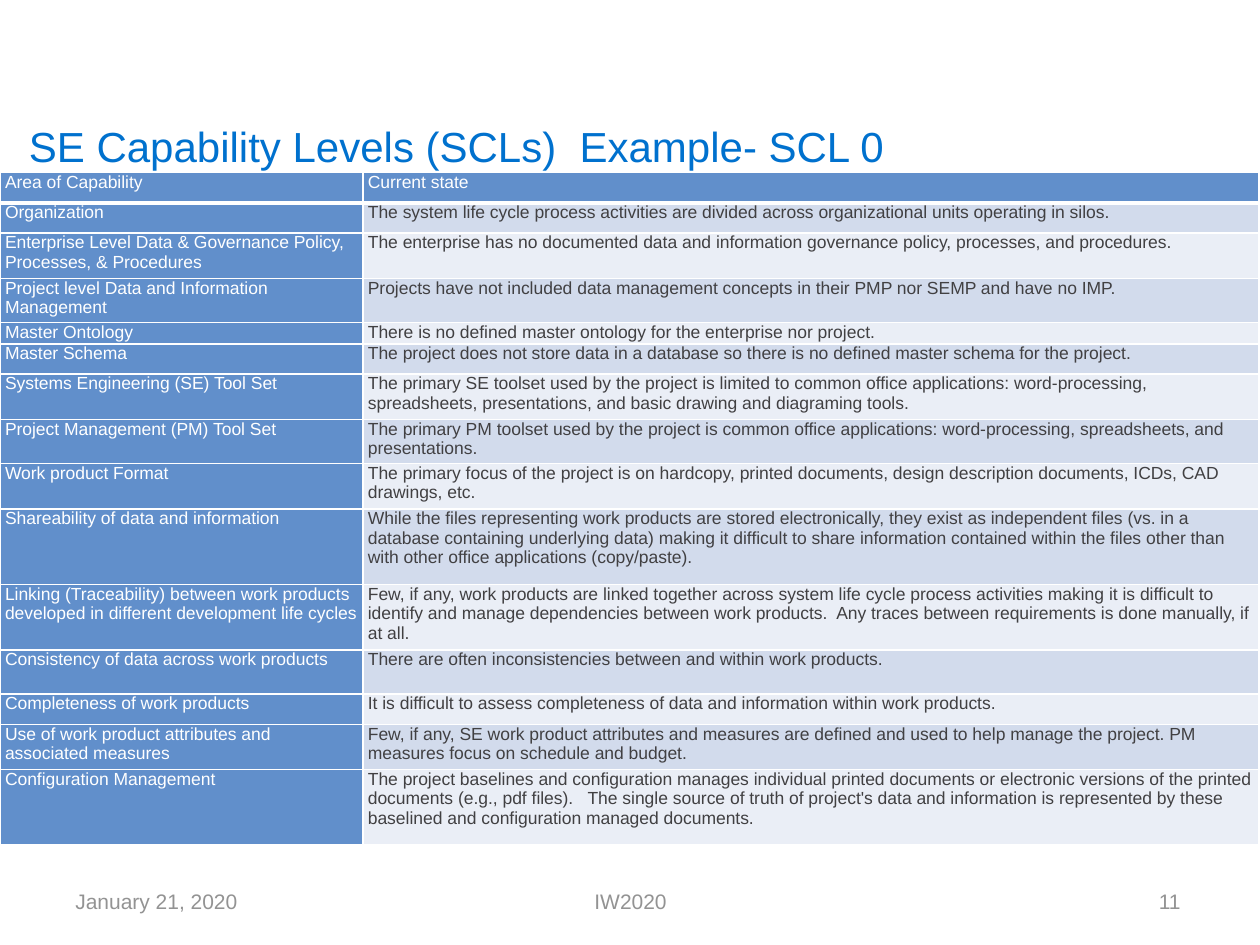
from dataclasses import dataclass

from lxml import etree
from pptx import Presentation
from pptx.dml.color import RGBColor
from pptx.enum.text import MSO_ANCHOR, PP_ALIGN
from pptx.oxml.ns import qn
from pptx.slide import Slide
from pptx.table import _Cell
from pptx.text.text import _Paragraph
from pptx.util import Inches, Pt

MIDDLE = MSO_ANCHOR.MIDDLE
LEFT, CENTER, RIGHT = PP_ALIGN.LEFT, PP_ALIGN.CENTER, PP_ALIGN.RIGHT


@dataclass(frozen=True)
class Theme:
    font: str = "Arial"
    title_color: str = "0071CE"
    footer_color: str = "939393"
    body_color: str = "414042"
    white: str = "FFFFFF"
    header_fill: str = "618FCB"
    dark_band: str = "D2DBEC"
    light_band: str = "EAEEF6"
    title_size: int = 24
    footer_size: int = 12
    table_size: int = 10
    border: int = 1
    header_border: int = 3


@dataclass(frozen=True)
class Label:
    text: str
    left: float
    top: float
    width: float
    height: float
    size: int
    color: str
    alignment: PP_ALIGN = LEFT
    side_inset: float = 0.13


@dataclass(frozen=True)
class CapabilityRow:
    height: float
    area: str
    state: str


THEME = Theme()
FOOTER_TOP, FOOTER_HEIGHT = 6.95, 0.4
FOOTER_STYLE = (THEME.footer_size, THEME.footer_color)

LABELS = [
    Label("SE Capability Levels (SCLs)  Example- SCL 0", 0.1, 0.94, 8.62, 0.43,
          THEME.title_size, THEME.title_color),
    Label("January 21, 2020", 0.5, FOOTER_TOP, 2.33, FOOTER_HEIGHT, *FOOTER_STYLE,
          side_inset=0.1),
    Label("IW2020", 3.42, FOOTER_TOP, 3.17, FOOTER_HEIGHT, *FOOTER_STYLE, CENTER),
    Label("11", 7.17, FOOTER_TOP, 2.33, FOOTER_HEIGHT, *FOOTER_STYLE, RIGHT),
]

COLUMN_WIDTHS = (2.88, 7.11)
ROWS = [
    CapabilityRow(0.24, "Area of Capability", "Current state"),
    CapabilityRow(0.24, "Organization",
                  "The system life cycle process activities are divided across "
                  "organizational units operating in silos."),
    CapabilityRow(0.36, "Enterprise Level Data & Governance Policy, Processes, & Procedures",
                  "The enterprise has no documented data and information governance "
                  "policy, processes, and procedures."),
    CapabilityRow(0.35, "Project level Data and Information Management",
                  "Projects have not included data management concepts in their PMP "
                  "nor SEMP and have no IMP."),
    CapabilityRow(0.17, "Master Ontology",
                  "There is no defined master ontology for the enterprise nor project."),
    CapabilityRow(0.24, "Master Schema",
                  "The project does not store data in a database so there is no defined "
                  "master schema for the project."),
    CapabilityRow(0.36, "Systems Engineering (SE) Tool Set",
                  "The primary SE toolset used by the project is limited to common office "
                  "applications: word-processing, spreadsheets, presentations, and basic "
                  "drawing and diagraming tools."),
    CapabilityRow(0.35, "Project Management (PM) Tool Set",
                  "The primary PM toolset used by the project is common office "
                  "applications: word-processing, spreadsheets, and presentations."),
    CapabilityRow(0.36, "Work product Format",
                  "The primary focus of the project is on hardcopy, printed documents, "
                  "design description documents, ICDs, CAD drawings, etc."),
    CapabilityRow(0.6, "Shareability of data and information",
                  "While the files representing work products are stored electronically, "
                  "they exist as independent files (vs. in a database containing underlying "
                  "data) making it difficult to share information contained within the "
                  "files other than with other office applications (copy/paste)."),
    CapabilityRow(0.52, "Linking (Traceability) between work products developed in "
                  "different development life cycles",
                  "Few, if any, work products are linked together across system life cycle "
                  "process activities making it is difficult to identify and manage "
                  "dependencies between work products.  Any traces between requirements "
                  "is done manually, if at all."),
    CapabilityRow(0.35, "Consistency of data across work products",
                  "There are often inconsistencies between and within work products."),
    CapabilityRow(0.24, "Completeness of work products",
                  "It is difficult to assess completeness of data and information within "
                  "work products."),
    CapabilityRow(0.36, "Use of work product attributes and associated measures",
                  "Few, if any, SE work product attributes and measures are defined and "
                  "used to help manage the project. PM measures focus on schedule and budget."),
    CapabilityRow(0.6, "Configuration Management",
                  "The project baselines and configuration manages individual printed "
                  "documents or electronic versions of the printed documents (e.g., pdf "
                  "files).   The single source of truth of project's data and information is "
                  "represented by these baselined and configuration managed documents."),
]


def format_runs(paragraph: _Paragraph, size: int, color: str) -> None:
    for run in paragraph.runs:
        run.font.name = THEME.font
        run.font.size = Pt(size)
        run.font.color.rgb = RGBColor.from_string(color)


def add_label(slide: Slide, label: Label) -> None:
    shape = slide.shapes.add_textbox(Inches(label.left), Inches(label.top),
                                     Inches(label.width), Inches(label.height))
    frame = shape.text_frame
    frame.word_wrap = True
    frame.vertical_anchor = MIDDLE
    frame.margin_left = frame.margin_right = Inches(label.side_inset)
    frame.margin_top = frame.margin_bottom = Inches(0.07)
    frame.text = label.text
    paragraph = frame.paragraphs[0]
    paragraph.alignment = label.alignment
    format_runs(paragraph, label.size, label.color)


def add_borders(cell: _Cell, bottom_width: int) -> None:
    """Line all four sides in white; must run before the cell gets its fill."""
    properties = cell._tc.get_or_add_tcPr()
    for side in ("lnL", "lnR", "lnT", "lnB"):
        width = bottom_width if side == "lnB" else THEME.border
        line = etree.SubElement(properties, qn(f"a:{side}"), w=str(Pt(width)))
        fill = etree.SubElement(line, qn("a:solidFill"))
        etree.SubElement(fill, qn("a:srgbClr"), val=THEME.white)


def fill_cell(cell: _Cell, text: str, color: str, fill: str, bottom_width: int) -> None:
    cell.margin_left = cell.margin_right = Inches(0.04)
    cell.margin_top = cell.margin_bottom = 0
    add_borders(cell, bottom_width)
    cell.fill.solid()
    cell.fill.fore_color.rgb = RGBColor.from_string(fill)
    cell.text_frame.text = text
    paragraph = cell.text_frame.paragraphs[0]
    paragraph.space_after = Pt(2)
    format_runs(paragraph, THEME.table_size, color)


def add_capability_table(slide: Slide) -> None:
    height = sum(row.height for row in ROWS)
    frame = slide.shapes.add_table(len(ROWS), len(COLUMN_WIDTHS), 0, Inches(1.37),
                                   Inches(sum(COLUMN_WIDTHS)), Inches(height))
    table = frame.table
    table.horz_banding = False
    for column, width in zip(table.columns, COLUMN_WIDTHS):
        column.width = Inches(width)
    for index, row in enumerate(ROWS):
        table.rows[index].height = Inches(row.height)
        bottom_width = THEME.border
        state_color = THEME.body_color
        state_fill = THEME.dark_band if index % 2 else THEME.light_band
        if index == 0:
            bottom_width = THEME.header_border
            state_color, state_fill = THEME.white, THEME.header_fill
        fill_cell(table.cell(index, 0), row.area, THEME.white, THEME.header_fill, bottom_width)
        fill_cell(table.cell(index, 1), row.state, state_color, state_fill, bottom_width)
    table.first_row = False


def main() -> None:
    presentation = Presentation()
    presentation.slide_width, presentation.slide_height = Inches(10), Inches(7.5)
    slide = presentation.slides.add_slide(presentation.slide_layouts[6])
    for label in LABELS:
        add_label(slide, label)
    add_capability_table(slide)
    presentation.save("out.pptx")


if __name__ == "__main__":
    main()
